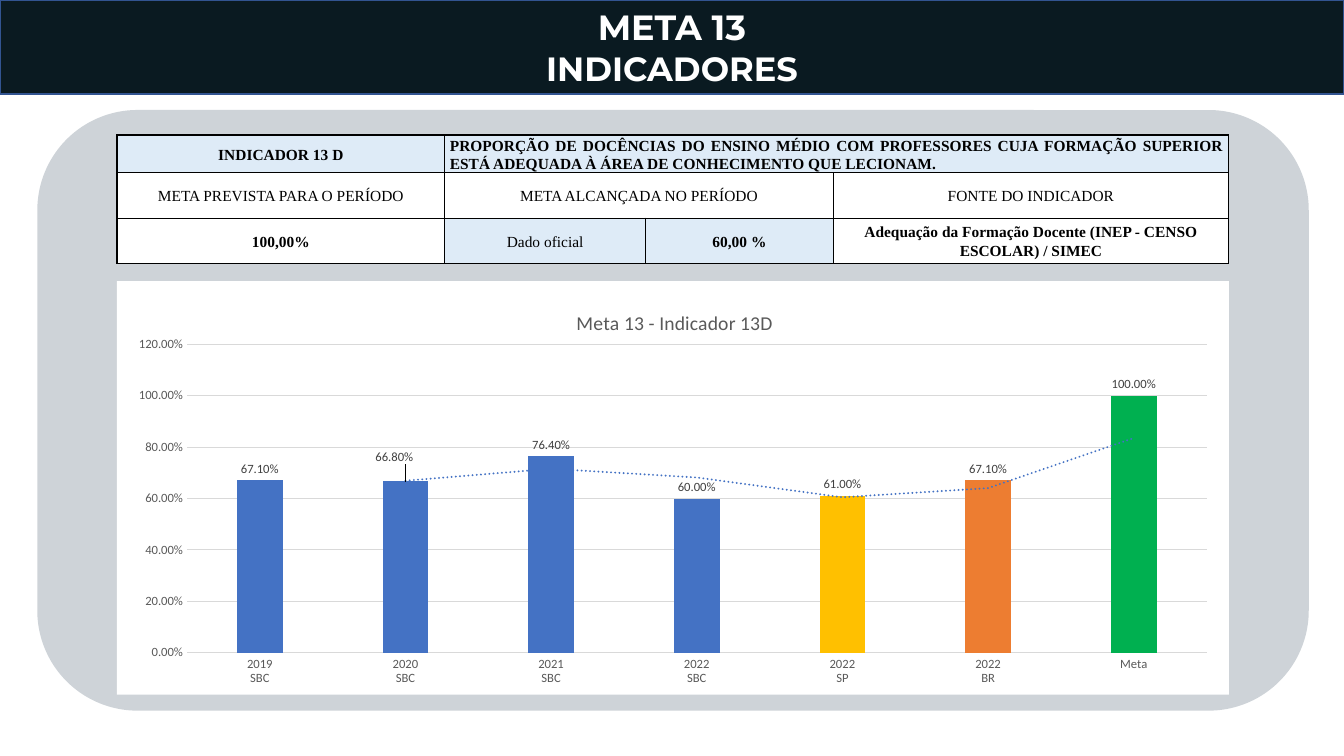
from dataclasses import dataclass
from typing import Any

from lxml.etree import _Element as Node
from pptx import Presentation
from pptx.chart.data import CategoryChartData
from pptx.dml.color import RGBColor
from pptx.enum.chart import XL_CHART_TYPE as Kind, XL_LABEL_POSITION as Spot, XL_TICK_MARK as Tick
from pptx.enum.shapes import MSO_SHAPE as Form
from pptx.enum.text import MSO_ANCHOR as Anchor, PP_ALIGN as Align
from pptx.oxml import parse_xml
from pptx.oxml.ns import nsdecls, qn
from pptx.util import Inches, Pt

NAVY = RGBColor(0x0A, 0x1A, 0x21)
EDGE = RGBColor(0x32, 0x54, 0x91)
PANEL = RGBColor(0xCE, 0xD3, 0xD8)
PALE = RGBColor(0xDE, 0xEB, 0xF7)
WHITE = RGBColor(0xFF, 0xFF, 0xFF)
BLACK = RGBColor(0, 0, 0)
BLUE = RGBColor(0x44, 0x72, 0xC4)
GOLD = RGBColor(0xFF, 0xC0, 0x00)
ORANGE = RGBColor(0xED, 0x7D, 0x31)
GREEN = RGBColor(0x00, 0xB0, 0x50)
GRID = RGBColor(0xD9, 0xD9, 0xD9)
GREY = RGBColor(0x59, 0x59, 0x59)
DARK = RGBColor(0x40, 0x40, 0x40)

WIDE, HIGH = Inches(13.33), Inches(7.5)


@dataclass
class Box:
    """A frame in percent of the slide's width and height."""
    left: float
    top: float
    width: float
    height: float

    def frame(self) -> tuple[int, ...]:
        sides = (self.left, WIDE), (self.top, HIGH), (self.width, WIDE), (self.height, HIGH)
        return tuple(int(part * full / 100) for part, full in sides)


@dataclass
class Cell:
    row: int
    col: int
    text: str
    fill: RGBColor = WHITE
    bold: bool = True
    span: int = 1
    align: Align = Align.CENTER


@dataclass
class Bar:
    name: str
    value: float
    color: RGBColor = BLUE


BAND = Box(0, 0, 100, 12.45)
BACK = Box(2.78, 14.55, 94.6, 79.45)
TABLE = Box(8.7, 17.87, 82.73, 16.4)
CHART = Box(8.7, 37.2, 82.73, 54.67)
COLS = 29.49, 18.06, 16.88, 35.57  # percent of the table's width
ROWS = 4.4, 6, 6  # percent of the slide's height

CELLS = [
    Cell(0, 0, "INDICADOR 13 D", PALE),
    Cell(0, 1, "PROPORÇÃO DE DOCÊNCIAS DO ENSINO MÉDIO COM PROFESSORES CUJA FORMAÇÃO "
         "SUPERIOR ESTÁ ADEQUADA À ÁREA DE CONHECIMENTO QUE LECIONAM.",
         PALE, span=3, align=Align.JUSTIFY),
    Cell(1, 0, "META PREVISTA PARA O PERÍODO", bold=False),
    Cell(1, 1, "META ALCANÇADA NO PERÍODO", bold=False, span=2),
    Cell(1, 3, "FONTE DO INDICADOR", bold=False),
    Cell(2, 0, "100,00%"),
    Cell(2, 1, "Dado oficial", PALE, bold=False),
    Cell(2, 2, "60,00 %", PALE),
    Cell(2, 3, "Adequação da Formação Docente (INEP - CENSO ESCOLAR) / SIMEC"),
]
BARS = [
    Bar("2019\nSBC", 0.671), Bar("2020\nSBC", 0.668), Bar("2021\nSBC", 0.764),
    Bar("2022\nSBC", 0.6), Bar("2022\nSP", 0.61, GOLD), Bar("2022\nBR", 0.671, ORANGE),
    Bar("Meta", 1, GREEN),
]


def style(item: Any, **form: Any) -> None:
    for key, value in form.items():
        setattr(item, key, value)


def ink(font: Any, name: str, size: float, color: RGBColor, bold: bool = False) -> None:
    style(font, name=name, size=Pt(size), bold=bold)
    font.color.rgb = color


def paint(fill: Any, color: RGBColor) -> None:
    fill.solid()
    fill.fore_color.rgb = color


def draw(slide: Any, form: Form, box: Box, color: RGBColor) -> Any:
    shape = slide.shapes.add_shape(form, *box.frame())
    shape.shadow.inherit = False
    paint(shape.fill, color)
    shape.line.fill.background()
    return shape


def head(slide: Any) -> None:
    band = draw(slide, Form.RECTANGLE, BAND, NAVY)
    paint(band.line.fill, EDGE)
    band.line.width = Pt(1)
    text = band.text_frame
    style(text, text="META 13\nINDICADORES", vertical_anchor=Anchor.MIDDLE)
    for para, size in zip(text.paragraphs, (25, 24)):
        para.alignment = Align.CENTER
        ink(para.runs[0].font, "Montserrat", size, WHITE, True)


def border(cell: Any) -> None:
    props = cell._tc.get_or_add_tcPr()
    for spot, side in enumerate("LRTB"):
        props.insert(spot, parse_xml(
            f'<a:ln{side} {nsdecls("a")} w="12700"><a:solidFill>'
            f'<a:srgbClr val="{BLACK}"/></a:solidFill></a:ln{side}>'))


def fill_in(table: Any, item: Cell) -> None:
    cell = table.cell(item.row, item.col)
    if item.span > 1:
        cell.merge(table.cell(item.row, item.col + item.span - 1))
    style(cell, text=item.text, vertical_anchor=Anchor.MIDDLE, margin_left=Inches(0.05),
          margin_right=Inches(0.05), margin_top=Inches(0.01), margin_bottom=0)
    paint(cell.fill, item.fill)
    para = cell.text_frame.paragraphs[0]
    style(para, alignment=item.align, line_spacing=1.07, space_after=Pt(8))
    ink(para.runs[0].font, "Times New Roman", 11, BLACK, item.bold)


def tabulate(slide: Any) -> None:
    frame = TABLE.frame()
    table = slide.shapes.add_table(len(ROWS), len(COLS), *frame).table
    for col, share in zip(table.columns, COLS):
        col.width = int(frame[2] * share / 100)
    for row, share in zip(table.rows, ROWS):
        row.height = int(HIGH * share / 100)
    for item in CELLS:
        fill_in(table, item)
    for cell in table.iter_cells():
        border(cell)


def place(node: Node, spot: int, **parts: Any) -> None:
    """Give a chart part a manual layout, in shares of the chart."""
    old = node.find(qn("c:layout"))
    if old is not None:
        node.remove(old)
    body = "".join(f'<c:{key} val="{value}"/>' for key, value in parts.items())
    node.insert(spot, parse_xml(
        f'<c:layout {nsdecls("c")}><c:manualLayout>{body}</c:manualLayout></c:layout>'))


def axes(chart: Any) -> None:
    for axis in (chart.category_axis, chart.value_axis):
        style(axis, major_tick_mark=Tick.NONE, minor_tick_mark=Tick.NONE)
        ink(axis.tick_labels.font, "Calibri", 9, GREY)
    scale = chart.value_axis
    style(scale, minimum_scale=0, maximum_scale=1.2, major_unit=0.2)
    style(scale.tick_labels, number_format="0.00%", number_format_is_linked=False)
    scale.format.line.fill.background()
    for line in (chart.category_axis.format.line, scale.major_gridlines.format.line):
        paint(line.fill, GRID)
        line.width = Pt(0.75)


def bars(plot: Any) -> None:
    style(plot, gap_width=219, overlap=-27, vary_by_categories=False)
    series = plot.series[0]
    series.invert_if_negative = False
    paint(series.format.fill, BLUE)
    for spot, bar in enumerate(BARS):
        if bar.color != BLUE:
            paint(series.points[spot].format.fill, bar.color)
    labels = series.data_labels
    style(labels, show_value=True, position=Spot.OUTSIDE_END,
          number_format="0.00%", number_format_is_linked=False)
    ink(labels.font, "Calibri", 9, DARK)
    moved = series.points[1].data_label
    moved.position = Spot.OUTSIDE_END
    ink(moved.font, "Calibri", 9, DARK)
    place(labels._element.find(qn("c:dLbl")), 1, x=-0.01, y=-0.03)
    series._element.find(qn("c:cat")).addprevious(parse_xml(
        f'<c:trendline {nsdecls("c", "a")}><c:spPr><a:ln w="19050" cap="rnd"><a:solidFill>'
        f'<a:srgbClr val="{BLUE}"/></a:solidFill><a:prstDash val="sysDot"/></a:ln></c:spPr>'
        '<c:trendlineType val="movingAvg"/><c:period val="2"/><c:dispRSqr val="0"/>'
        '<c:dispEq val="0"/></c:trendline>'))


def graph(slide: Any) -> None:
    data = CategoryChartData(number_format="0.00%")
    data.categories = [bar.name for bar in BARS]
    data.add_series("Series 1", [bar.value for bar in BARS])
    chart = slide.shapes.add_chart(Kind.COLUMN_CLUSTERED, *CHART.frame(), data).chart
    style(chart, has_legend=False, has_title=True)
    ink(chart.font, "Calibri", 10, BLACK)
    title = chart.chart_title
    title.text_frame.text = "Meta 13 - Indicador 13D"
    ink(title.text_frame.paragraphs[0].runs[0].font, "Calibri", 14, GREY)
    place(title._element, 1, xMode="edge", yMode="edge", x=0.41, y=0.06)
    root = chart._chartSpace
    place(root.chart.plotArea, 0, layoutTarget="inner", xMode="edge", yMode="edge",
          x=0.063, y=0.153, w=0.917, h=0.746)
    root.chart.addnext(parse_xml(
        f'<c:spPr {nsdecls("c", "a")}><a:solidFill><a:srgbClr val="{WHITE}"/></a:solidFill>'
        '<a:ln><a:noFill/></a:ln></c:spPr>'))
    axes(chart)
    bars(chart.plots[0])


def main() -> None:
    deck = Presentation()
    style(deck, slide_width=WIDE, slide_height=HIGH)
    slide = deck.slides.add_slide(deck.slide_layouts[6])
    head(slide)
    draw(slide, Form.ROUNDED_RECTANGLE, BACK, PANEL)
    tabulate(slide)
    graph(slide)
    deck.save("out.pptx")


if __name__ == "__main__":
    main()
